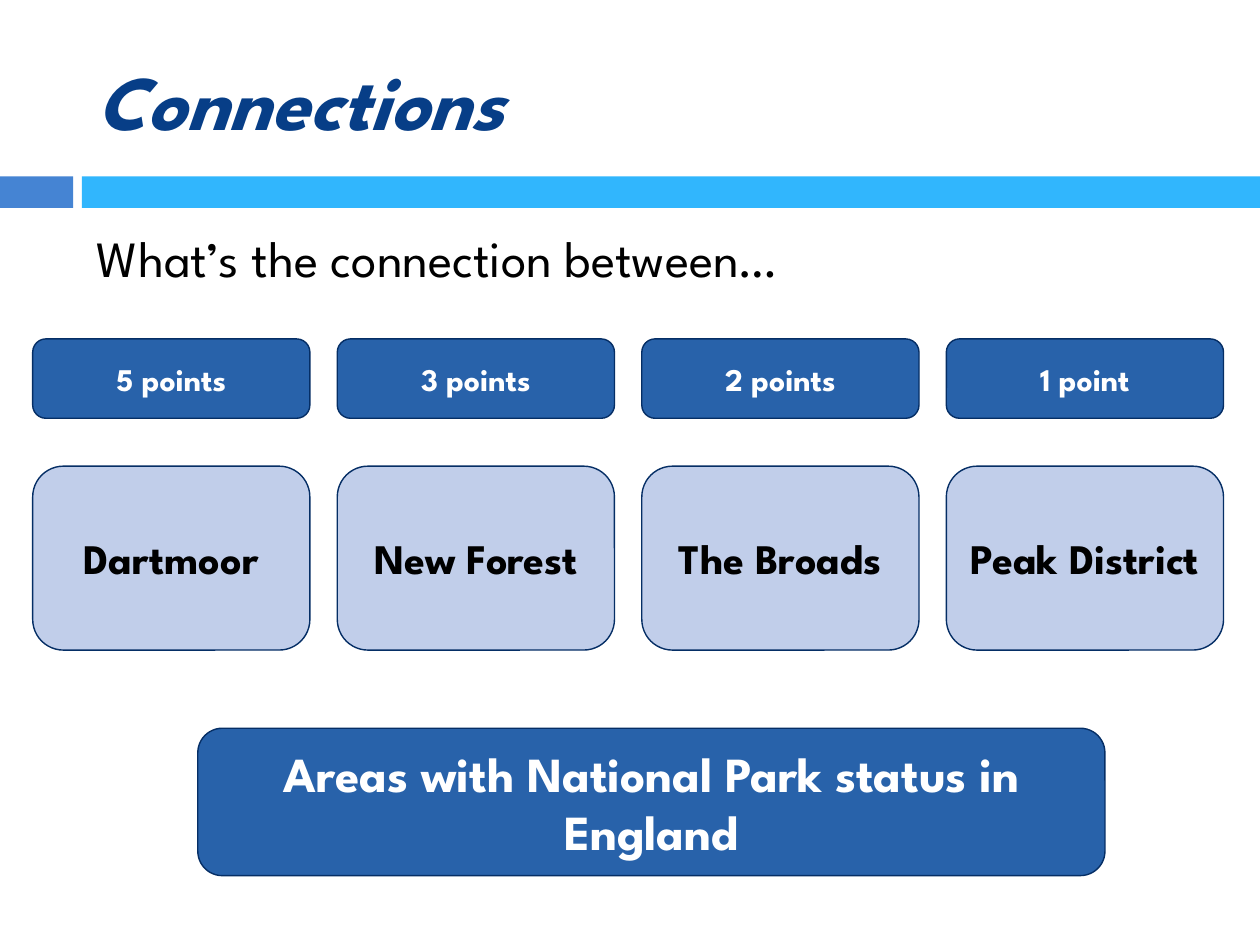
from pptx import Presentation
from pptx.dml.color import RGBColor
from pptx.enum.shapes import MSO_SHAPE
from pptx.enum.text import MSO_ANCHOR, PP_ALIGN
from pptx.util import Inches, Pt

FONT = "League Spartan"
NAVY = RGBColor(0x07, 0x3E, 0x87)
OUTLINE = RGBColor(0x05, 0x2E, 0x65)
BLUE = RGBColor(0x28, 0x62, 0xAA)
PALE = RGBColor(0xC1, 0xCE, 0xEA)
ACCENT = RGBColor(0x45, 0x84, 0xD3)
SKY = RGBColor(0x31, 0xB6, 0xFD)
WHITE = RGBColor(0xFF, 0xFF, 0xFF)
BLACK = RGBColor(0x00, 0x00, 0x00)

GRID_LEFT, COLUMN_STEP, COLUMN_WIDTH = 0.26, 2.417, 2.2
TEXT_LEFT, TEXT_WIDTH = 0.67, 8.92
CLUES = [
    ("5 points", "Dartmoor"),
    ("3 points", "New Forest"),
    ("2 points", "The Broads"),
    ("1 point", "Peak District"),
]


def write(shape, text, size, color, bold=False, italic=False):
    frame = shape.text_frame
    frame.word_wrap = True
    frame.text = text
    para = frame.paragraphs[0]
    font = para.runs[0].font
    font.name, font.size = FONT, Pt(size)
    font.bold, font.italic = bold, italic
    font.color.rgb = color
    return para


def add_block(page, kind, area, fill):
    block = page.shapes.add_shape(kind, *map(Inches, area))
    block.shadow.inherit = False
    block.fill.solid()
    block.fill.fore_color.rgb = fill
    block.line.fill.background()
    return block


def add_card(page, area, fill, text, size, color):
    card = add_block(page, MSO_SHAPE.ROUNDED_RECTANGLE, area, fill)
    card.line.color.rgb = OUTLINE
    card.line.width = Pt(0.79)
    card.text_frame.vertical_anchor = MSO_ANCHOR.MIDDLE
    write(card, text, size, color, bold=True).alignment = PP_ALIGN.CENTER


def add_heading(page, top, height, anchor, text, size, color, **style):
    box = page.shapes.add_textbox(
        *map(Inches, (TEXT_LEFT, top, TEXT_WIDTH, height))
    )
    box.text_frame.vertical_anchor = anchor
    return write(box, text, size, color, **style)


def main():
    deck = Presentation()
    deck.slide_width, deck.slide_height = Inches(10), Inches(7.5)
    page = deck.slides.add_slide(deck.slide_layouts[6])

    add_block(page, MSO_SHAPE.RECTANGLE, (0, 1.4, 0.58, 0.25), ACCENT)
    add_block(page, MSO_SHAPE.RECTANGLE, (0.65, 1.4, 9.35, 0.25), SKY)
    add_heading(page, 0.25, 1.08, MSO_ANCHOR.MIDDLE, "Connections", 44, NAVY,
                bold=True, italic=True)
    question = add_heading(page, 1.75, 0.73, MSO_ANCHOR.TOP,
                           "What’s the connection between…", 29, BLACK)
    question.space_before = Pt(7)

    for column, (points, place) in enumerate(CLUES):
        left = GRID_LEFT + column * COLUMN_STEP
        add_card(page, (left, 2.69, COLUMN_WIDTH, 0.63), BLUE, points, 18, WHITE)
        add_card(page, (left, 3.7, COLUMN_WIDTH, 1.46), PALE, place, 24, BLACK)

    add_card(page, (1.57, 5.78, 7.2, 1.17), BLUE,
             "Areas with National Park status in England", 28, WHITE)
    deck.save("out.pptx")


if __name__ == "__main__":
    main()
